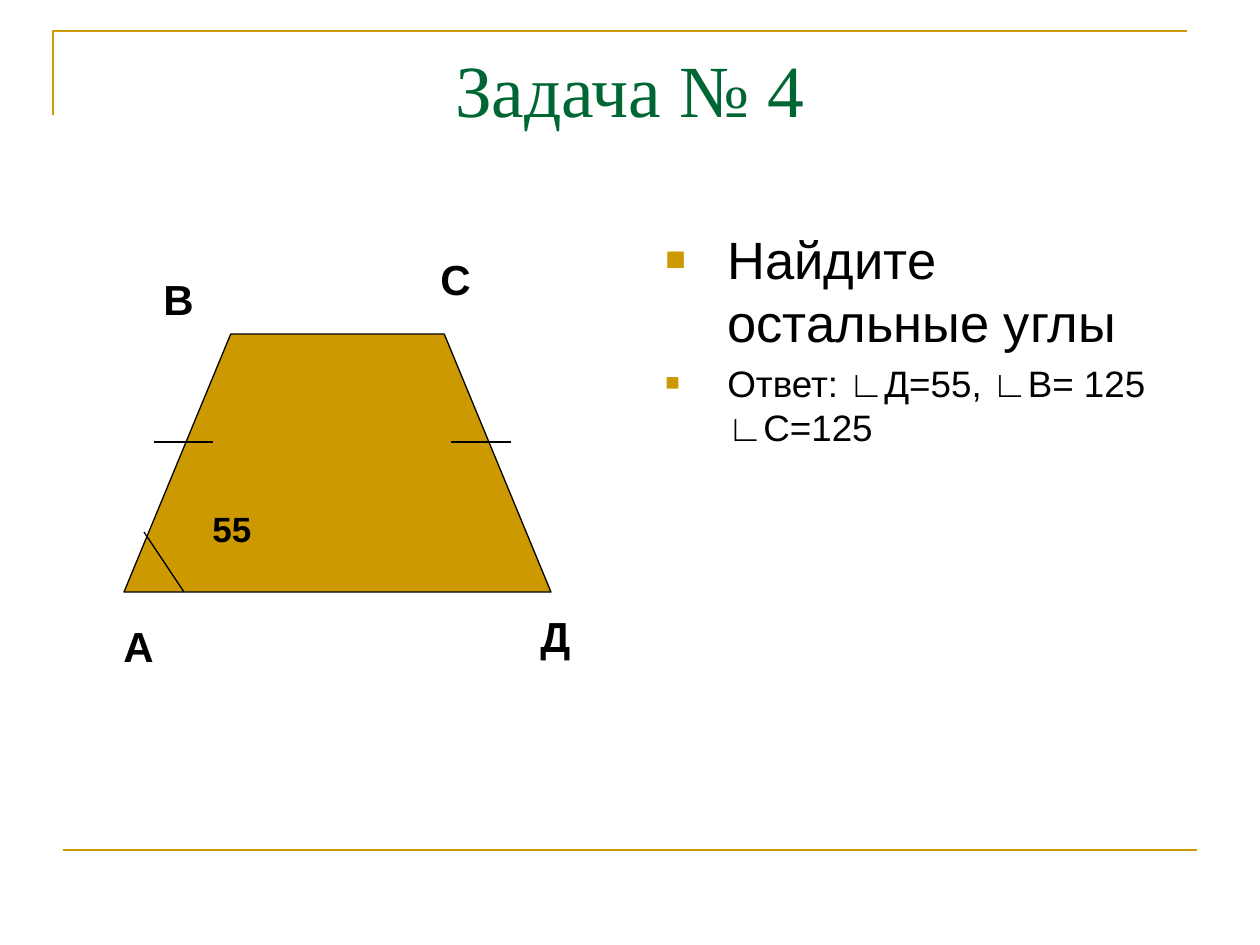
from lxml.etree import SubElement
from pptx import Presentation
from pptx.dml.color import RGBColor
from pptx.enum.shapes import MSO_CONNECTOR
from pptx.enum.text import MSO_ANCHOR, MSO_AUTO_SIZE, PP_ALIGN
from pptx.oxml.ns import qn
from pptx.util import Emu, Pt

COLORS = {"gold": "CC9900", "green": "006633", "ink": "000000"}
PX_PER_INCH = 126


def px(length):
    return Emu(round(length * 914400 / PX_PER_INCH))


def rgb(name):
    return RGBColor.from_string(COLORS[name])


def add_line(slide, start, end, color, width):
    line = slide.shapes.add_connector(
        MSO_CONNECTOR.STRAIGHT, *map(px, start), *map(px, end))
    line.line.color.rgb = rgb(color)
    line.line.width = Pt(width)
    SubElement(line._element.spPr, qn("a:effectLst"))


def add_outline(slide, points, closed, color, width):
    builder = slide.shapes.build_freeform(*map(px, points[0]), scale=1.0)
    builder.add_line_segments(
        [(px(x), px(y)) for x, y in points[1:]], close=closed)
    outline = builder.convert_to_shape()
    outline.shadow.inherit = False
    outline.fill.background()
    outline.line.color.rgb = rgb(color)
    outline.line.width = Pt(width)
    return outline


def add_text(slide, box, lines, sizes, font="Arial", color="ink", bold=False,
             wrap=True):
    frame = slide.shapes.add_textbox(*map(px, box)).text_frame
    frame.word_wrap = wrap
    frame.vertical_anchor = MSO_ANCHOR.TOP
    frame.auto_size = MSO_AUTO_SIZE.NONE if wrap else MSO_AUTO_SIZE.SHAPE_TO_FIT_TEXT
    frame.text = "\n".join(lines)
    for paragraph, size in zip(frame.paragraphs, sizes):
        for run in paragraph.runs:
            run.font.name = font
            run.font.size = Pt(size)
            run.font.bold = bold
            run.font.color.rgb = rgb(color)
    return frame


def add_bullet(paragraph, indent):
    properties = paragraph._p.get_or_add_pPr()
    properties.set("marL", str(px(indent)))
    properties.set("indent", str(-px(indent)))
    bullet_color = SubElement(properties, qn("a:buClr"))
    SubElement(bullet_color, qn("a:srgbClr"), val=COLORS["gold"])
    SubElement(properties, qn("a:buSzPct"), val="65000")
    SubElement(properties, qn("a:buFont"), typeface="Arial")
    SubElement(properties, qn("a:buChar"), char="■")


def draw_frame(slide, left, top, width, height):
    # Corner rule at the top, straight rule at the bottom
    corner = [(left, top + 84), (left, top), (left + width, top)]
    add_outline(slide, corner, False, "gold", 1.5)
    bottom = top + height
    add_line(slide, (left + 10, bottom), (left + 10 + width, bottom), "gold", 1.5)


def draw_title(slide, *box):
    title = add_text(slide, box, ["Задача № 4"], [42], "Times New Roman", "green")
    title.paragraphs[0].alignment = PP_ALIGN.CENTER


def draw_task(slide, *box):
    sizes = [30, 21]
    task = add_text(slide, box, ["Найдите остальные углы",
                                 "Ответ: ∟Д=55, ∟В= 125 ∟С=125"], sizes)
    for paragraph, size in zip(task.paragraphs, sizes):
        paragraph.space_before = Pt(size * 0.2)
        add_bullet(paragraph, 62)


def draw_trapezoid(slide, left, top, width, height):
    def at(x, y):
        return left + x, top + y

    # Figure: the upper base is half of the lower one
    inset = width / 4
    corners = [at(0, height), at(inset, 0), at(width - inset, 0), at(width, height)]
    figure = add_outline(slide, corners, True, "ink", 0.75)
    figure.fill.solid()
    figure.fill.fore_color.rgb = rgb("gold")

    # Vertex names
    for name, x, y in [("А", -13, 280), ("В", 27, -67),
                       ("С", 304, -87), ("Д", 404, 270)]:
        add_text(slide, (*at(x, y), 55, 63), [name], [24], bold=True, wrap=False)

    # Marks of the equal sides, then the angle mark
    for start, end in [((30, 108), (89, 108)), ((327, 108), (387, 108)),
                       ((20, 198), (60, height))]:
        add_line(slide, at(*start), at(*end), "ink", 0.75)
    add_text(slide, (*at(76, 167), 64, 54), ["55"], [20], bold=True, wrap=False)


def main():
    presentation = Presentation()
    presentation.slide_width = px(1260)
    presentation.slide_height = px(945)
    slide = presentation.slides.add_slide(presentation.slide_layouts[6])
    draw_frame(slide, 53, 31, 1134, 819)
    draw_title(slide, 63, 38, 1134, 157)
    draw_task(slide, 653, 221, 544, 394)
    draw_trapezoid(slide, 124, 334, 427, 258)
    presentation.save("out.pptx")


if __name__ == "__main__":
    main()
